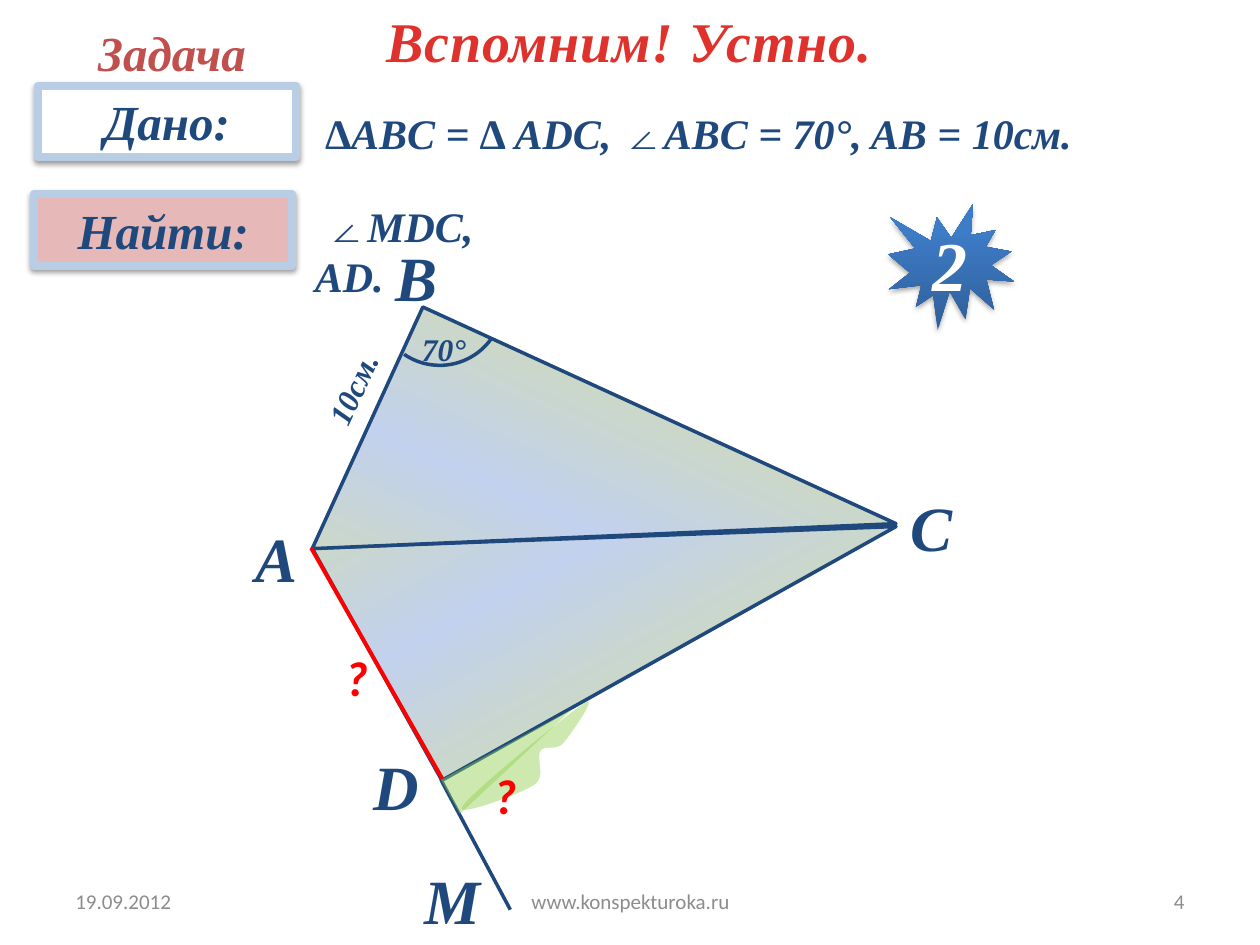
from lxml import etree
from pptx import Presentation
from pptx import util as u
from pptx.dml.color import RGBColor
from pptx.enum import shapes, text
from pptx.oxml.ns import qn

COLORS = {
    "navy": "1F497D", "red": "FF0000", "title": "E0322D", "task": "C0504D",
    "grey": "8C8C8C", "white": "FFFFFF", "pink": "E6B9B8", "frame": "B9CDE5",
    "leaf": "92D050", "edge": "D9E28F", "middle": "C2D1ED", "black": "000000",
    "star_low": "2F5F99", "star_high": "3D7CC7", "star_top": "3A7CCB",
}
SERIF, SANS = "Times New Roman", "Calibri"
LEFT, CENTER, RIGHT = text.PP_ALIGN.LEFT, text.PP_ALIGN.CENTER, text.PP_ALIGN.RIGHT
TOP, MIDDLE = text.MSO_ANCHOR.TOP, text.MSO_ANCHOR.MIDDLE
SHAPE = shapes.MSO_SHAPE


def rgb(name):
    return RGBColor.from_string(COLORS[name])


def inches(values):
    return [u.Inches(value) for value in values]


def curve(start, *segments, steps=12):
    """Points along a chain of cubic Bezier segments."""
    points = [start]
    for a, b, end in segments:
        begin = points[-1]
        for step in range(1, steps + 1):
            t = step / steps
            weights = ((1 - t) ** 3, 3 * t * (1 - t) ** 2, 3 * t * t * (1 - t), t ** 3)
            points.append(tuple(
                sum(w * p[axis] for w, p in zip(weights, (begin, a, b, end)))
                for axis in (0, 1)))
    return points


class Painter:
    def __init__(self, page):
        self.page = page

    def fill_text(self, box, words, size, color="navy", font=SERIF, strong=True,
                  align=LEFT, anchor=TOP, wrap=False, spacing=None):
        frame = box.text_frame
        frame.word_wrap = wrap
        frame.auto_size = text.MSO_AUTO_SIZE.NONE
        frame.vertical_anchor = anchor
        para = frame.paragraphs[0]
        para.alignment = align
        para.space_before = u.Pt(0)
        span = para.add_run()
        span.text = words
        span.font.name, span.font.size = font, u.Pt(size)
        span.font.bold = span.font.italic = strong
        span.font.color.rgb = rgb(color)
        if spacing:
            span.font._element.set("spc", str(int(spacing * 100)))
        return para

    def label(self, at, words, size, rotation=0, **style):
        box = self.page.shapes.add_textbox(*inches(at))
        box.rotation = rotation
        self.fill_text(box, words, size, **style)

    def placeholder(self, box, at, words, size, **style):
        box.left, box.top, box.width, box.height = inches(at)
        return self.fill_text(box, words, size, **style)

    def shape(self, kind, at, fill=None, line=None, width=2, rotation=0, parent=None):
        item = (parent or self.page).shapes.add_shape(kind, *inches(at))
        item.rotation = rotation
        self.paint(item, fill, line, width)
        return item

    def paint(self, item, fill, line=None, width=2):
        item.shadow.inherit = False
        if fill:
            item.fill.solid()
            item.fill.fore_color.rgb = rgb(fill)
        else:
            item.fill.background()
        if line:
            item.line.color.rgb = rgb(line)
            item.line.width = u.Pt(width)
        else:
            item.line.fill.background()

    def gradient(self, item, stops, angle):
        item.fill.gradient()
        grad = item._element.spPr.find(qn("a:gradFill"))
        grad.set("rotWithShape", "1")
        stop_list = grad.find(qn("a:gsLst"))
        for old in list(stop_list):
            stop_list.remove(old)
        for position, color in stops:
            stop = etree.SubElement(stop_list, qn("a:gs"), pos=str(position * 1000))
            etree.SubElement(stop, qn("a:srgbClr"), val=COLORS[color])
        grad.find(qn("a:lin")).set("ang", str(angle * 60000))

    def drop_shadow(self, item, alpha, blur, distance):
        effects = item._element.spPr.find(qn("a:effectLst"))
        shadow = etree.SubElement(
            effects, qn("a:outerShdw"), blurRad=str(u.Pt(blur)),
            dist=str(u.Pt(distance)), dir="5400000", rotWithShape="0")
        color = etree.SubElement(shadow, qn("a:srgbClr"), val=COLORS["black"])
        etree.SubElement(color, qn("a:alpha"), val=str(alpha * 1000))

    def triangle(self, at, rotation, flip=False):
        item = self.shape(SHAPE.RIGHT_TRIANGLE, at, line="navy", rotation=rotation)
        self.gradient(item, [(0, "edge"), (50, "middle"), (100, "edge")], 90)
        if flip:
            item._element.spPr.find(qn("a:xfrm")).set("flipV", "1")

    def outline(self, parent, points, fill, alpha):
        corners = [inches(point) for point in points]
        builder = parent.shapes.build_freeform(*corners[0])
        builder.add_line_segments(corners[1:], close=True)
        item = builder.convert_to_shape()
        self.paint(item, fill)
        color = item._element.spPr.find(qn("a:solidFill"))[0]
        etree.SubElement(color, qn("a:alpha"), val=str(alpha * 1000))

    def line(self, start, end, color, width):
        item = self.page.shapes.add_connector(
            shapes.MSO_CONNECTOR.STRAIGHT, *inches(start + end))
        item.line.color.rgb = rgb(color)
        item.line.width = u.Pt(width)
        etree.SubElement(item._element.spPr, qn("a:effectLst"))


def main():
    deck = Presentation()
    deck.slide_width, deck.slide_height = inches((10, 7.5))
    page = deck.slides.add_slide(deck.slide_layouts[1])
    painter = Painter(page)

    # Title and the given facts
    painter.placeholder(page.shapes.title, (2.95, 0, 4.09, 0.64), "Вспомним! Устно.", 32,
                        color="title", align=CENTER, spacing=0.5)
    facts = painter.placeholder(page.placeholders[1], (2.4, 0.8, 7.6, 0.5),
                                " ∆АВC = ∆ ADC, ∠ABC = 70°, AB = 10см.", 24,
                                anchor=MIDDLE, wrap=True)
    layout = facts._p.get_or_add_pPr()
    layout.set("marL", str(u.Inches(0.5)))
    layout.set("indent", str(u.Inches(-0.5)))
    etree.SubElement(layout, qn("a:buNone"))

    # Footer
    for left, width, words, align in ((0.5, 2.33, "19.09.2012", LEFT),
                                      (3.42, 3.17, "www.konspekturoka.ru", CENTER),
                                      (7.17, 2.33, "4", RIGHT)):
        painter.label((left, 6.95, width, 0.4), words, 12, color="grey", font=SANS,
                      strong=False, align=align, anchor=MIDDLE, wrap=True)

    # Task headings
    painter.label((0.67, 0.13, 1.39, 0.57), "Задача", 28, color="task", align=CENTER)
    headings = page.shapes.add_group_shape()
    for left, top, words, fill in ((0.3, 0.68, "Дано:", "white"),
                                   (0.27, 1.54, "Найти:", "pink")):
        plate = painter.shape(SHAPE.RECTANGLE, (left, top, 2.05, 0.57), fill, "frame", 4.5,
                              parent=headings)
        painter.drop_shadow(plate, 38, 3.1, 1.6)
        painter.fill_text(plate, words, 28, align=CENTER, wrap=True)
    painter.label((2.4, 1.54, 1.98, 0.9), " ∠MDC, AD.", 24, wrap=True)

    # Numbered star
    star = painter.shape(SHAPE.EXPLOSION1, (7.05, 1.62, 1, 1))
    painter.gradient(star, [(0, "star_low"), (80, "star_high"), (100, "star_top")], 270)
    painter.drop_shadow(star, 35, 3.1, 1.8)
    painter.fill_text(star, "2", 40, color="white", align=CENTER, anchor=MIDDLE, wrap=True)

    # Triangles and the extended side
    painter.triangle((2.73, 3.21, 4.13, 2.11), 330.8)
    painter.triangle((2.73, 3.2, 4.13, 2.11), 24.6, flip=True)
    painter.line((3.5, 6.19), (4.05, 7.22), "navy", 2)

    # Vertices
    for left, top, width, letter in ((1.93, 4.07, 0.54, "А"), (2.87, 5.88, 0.57, "D"),
                                     (7.13, 3.83, 0.54, "C"), (3.04, 1.84, 0.54, "B"),
                                     (3.27, 6.79, 0.65, "M")):
        painter.label((left, top, width, 0.71), letter, 36)

    # Shaded unknown angle
    angle = page.shapes.add_group_shape()
    wedge = [(3.65, 6.46), (3.5, 6.19), (4.54, 5.63)]
    wave = curve((3.67, 6.4),
                 ((3.6, 6.5), (4.13, 6.3), (4.24, 6.23)),
                 ((4.34, 6.16), (4.25, 6.02), (4.29, 5.96)),
                 ((4.32, 5.91), (4.41, 5.96), (4.47, 5.9)),
                 ((4.53, 5.83), (4.76, 5.5), (4.64, 5.58)),
                 ((4.51, 5.66), (3.74, 6.29), (3.67, 6.4)))
    for points in (wedge, wave):
        painter.outline(angle, points, "leaf", 45)

    # Unknown side and question marks
    painter.line((2.47, 4.35), (3.51, 6.18), "red", 2.25)
    for left, top in ((3.82, 6.03), (2.64, 5.09)):
        painter.label((left, top, 0.38, 0.57), "?", 28, color="red", font=SANS)

    # Known side and angle
    painter.label((2.4, 2.88, 0.8, 0.4), "10см.", 18, rotation=294.9)
    painter.label((3.25, 2.57, 0.56, 0.4), "70°", 18)
    painter.shape(SHAPE.ARC, (2.99, 1.9, 1, 1), line="navy", rotation=124.5)

    deck.save("out.pptx")


if __name__ == "__main__":
    main()
